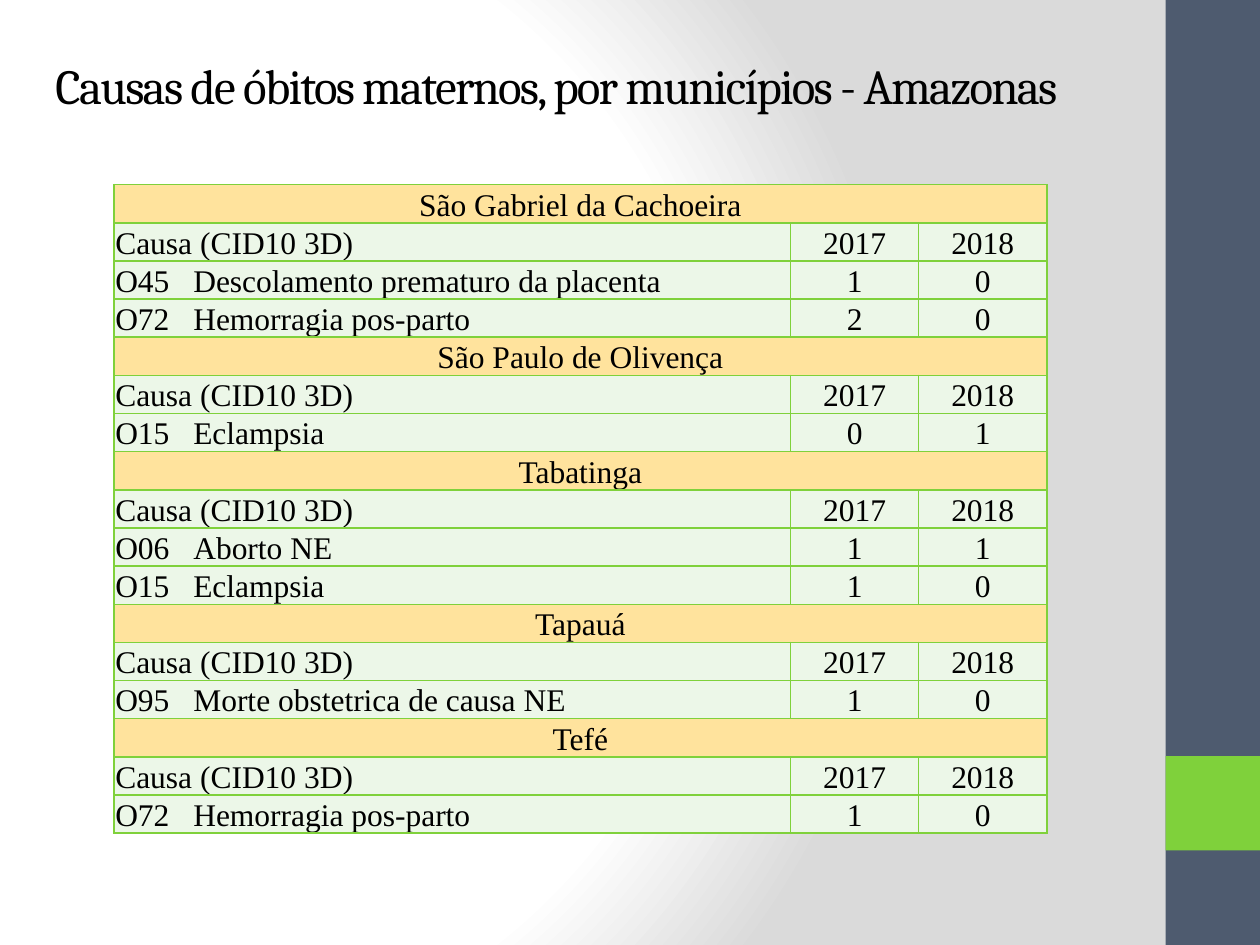
from dataclasses import dataclass

from lxml import etree
from pptx import Presentation
from pptx.dml.color import RGBColor
from pptx.enum.shapes import MSO_SHAPE
from pptx.enum.text import MSO_ANCHOR, MSO_AUTO_SIZE, PP_ALIGN
from pptx.oxml import parse_xml
from pptx.oxml.ns import nsdecls, qn
from pptx.util import Pt

RECT = MSO_SHAPE.RECTANGLE
LEFT, CENTER = PP_ALIGN.LEFT, PP_ALIGN.CENTER
MIDDLE, BOTTOM = MSO_ANCHOR.MIDDLE, MSO_ANCHOR.BOTTOM
NO_FIT = MSO_AUTO_SIZE.NONE


@dataclass(frozen=True)
class Theme:
    text: str = "000000"
    sidebar: str = "4E5B6F"
    accent: str = "7FD13B"
    town_fill: str = "FFE39D"
    row_fill: str = "ECF7E8"
    bg_light: str = "FFFFFF"
    bg_dark: str = "DADADA"
    title_font: str = "Cambria"
    table_font: str = "Times New Roman"
    title_size: int = 28
    table_size: int = 18


THEME = Theme()
TITLE = "Causas de óbitos maternos, por municípios - Amazonas"
HEADER = ("Causa (CID10 3D)", 2017, 2018)
# Town: (code and cause, deaths in 2017, deaths in 2018)
DEATHS = {
    "São Gabriel da Cachoeira": [
        ("O45\tDescolamento prematuro da placenta", 1, 0),
        ("O72\tHemorragia pos-parto", 2, 0),
    ],
    "São Paulo de Olivença": [("O15\tEclampsia", 0, 1)],
    "Tabatinga": [("O06\tAborto NE", 1, 1), ("O15\tEclampsia", 1, 0)],
    "Tapauá": [("O95\tMorte obstetrica de causa NE", 1, 0)],
    "Tefé": [("O72\tHemorragia pos-parto", 1, 0)],
}
COL_WIDTHS = (386.6, 73.2, 73.2)
ROW_HEIGHT = 21.8
CAUSE_TAB = 44.6


def set_font(p, name, size):
    p.font.name = name
    p.font.size = Pt(size)
    p.font.bold = False
    p.font.color.rgb = RGBColor.from_string(THEME.text)


def set_background(s):
    stops = ((0, THEME.bg_light), (75, THEME.bg_light), (100, THEME.bg_dark))
    gs = "".join(f'<a:gs pos="{pos * 1000}"><a:srgbClr val="{color}"/></a:gs>'
                 for pos, color in stops)
    s._element.cSld.insert(0, parse_xml(
        f'<p:bg {nsdecls("p", "a")}><p:bgPr><a:gradFill rotWithShape="1">'
        f'<a:gsLst>{gs}</a:gsLst><a:path path="circle">'
        '<a:fillToRect l="20000" t="50000" r="100000" b="50000"/></a:path>'
        '</a:gradFill><a:effectLst/></p:bgPr></p:bg>'))


def add_sidebar(s, x, y, w, h):
    # Full-height band with a square accent on it
    for top, height, color in ((y, h, THEME.sidebar), (y + 0.8 * h, w, THEME.accent)):
        sp = s.shapes.add_shape(RECT, Pt(x), Pt(top), Pt(w), Pt(height))
        sp.shadow.inherit = False
        sp.fill.solid()
        sp.fill.fore_color.rgb = RGBColor.from_string(color)
        sp.line.fill.background()


def add_title(s, x, y, w, h):
    sp = s.shapes.title
    sp.left, sp.top, sp.width, sp.height = Pt(x), Pt(y), Pt(w), Pt(h)
    tf = sp.text_frame
    tf.text = TITLE
    tf.word_wrap = True
    tf.auto_size = NO_FIT
    tf.vertical_anchor = MIDDLE
    p = tf.paragraphs[0]
    p.alignment = LEFT
    set_font(p, THEME.title_font, THEME.title_size)
    p.runs[0].font._element.set("spc", "-100")


def set_borders(cell):
    tcPr = cell._tc.get_or_add_tcPr()
    for side in ("lnL", "lnR", "lnT", "lnB"):
        ln = etree.SubElement(tcPr, qn(f"a:{side}"), w=str(Pt(1)))
        fill = etree.SubElement(ln, qn("a:solidFill"))
        etree.SubElement(fill, qn("a:srgbClr"), val=THEME.accent)


def fill_cell(cell, value, align, color):
    set_borders(cell)
    cell.fill.solid()
    cell.fill.fore_color.rgb = RGBColor.from_string(color)
    cell.margin_left = cell.margin_right = cell.margin_top = Pt(0.7)
    cell.margin_bottom = 0
    cell.vertical_anchor = BOTTOM
    cell.text = str(value)
    p = cell.text_frame.paragraphs[0]
    p.alignment = align
    if "\t" in p.text:
        tabs = etree.SubElement(p._p.get_or_add_pPr(), qn("a:tabLst"))
        etree.SubElement(tabs, qn("a:tab"), pos=str(Pt(CAUSE_TAB)), algn="l")
    set_font(p, THEME.table_font, THEME.table_size)


def add_deaths_table(s, x, y):
    rows = []
    for town, causes in DEATHS.items():
        rows += [(town, "", ""), HEADER, *causes]
    table = s.shapes.add_table(len(rows), len(COL_WIDTHS), Pt(x), Pt(y),
                               Pt(sum(COL_WIDTHS)), Pt(ROW_HEIGHT * len(rows))).table
    table.first_row = table.horz_banding = False
    for col, width in zip(table.columns, COL_WIDTHS):
        col.width = Pt(width)
    for i, row in enumerate(rows):
        table.rows[i].height = Pt(ROW_HEIGHT)
        is_town = row[0] in DEATHS
        color = THEME.town_fill if is_town else THEME.row_fill
        for j, value in enumerate(row):
            align = CENTER if is_town or j else LEFT
            fill_cell(table.cell(i, j), value, align, color)
        if is_town:
            table.cell(i, 0).merge(table.cell(i, len(row) - 1))


def main():
    prs = Presentation()
    prs.slide_width, prs.slide_height = Pt(720), Pt(540)
    s = prs.slides.add_slide(prs.slide_layouts[5])
    set_background(s)
    add_sidebar(s, 666, 0, 54, 540)
    add_title(s, 24.5, 3.6, 675, 90)
    add_deaths_table(s, 65.2, 105.5)
    prs.save("out.pptx")


if __name__ == "__main__":
    main()
